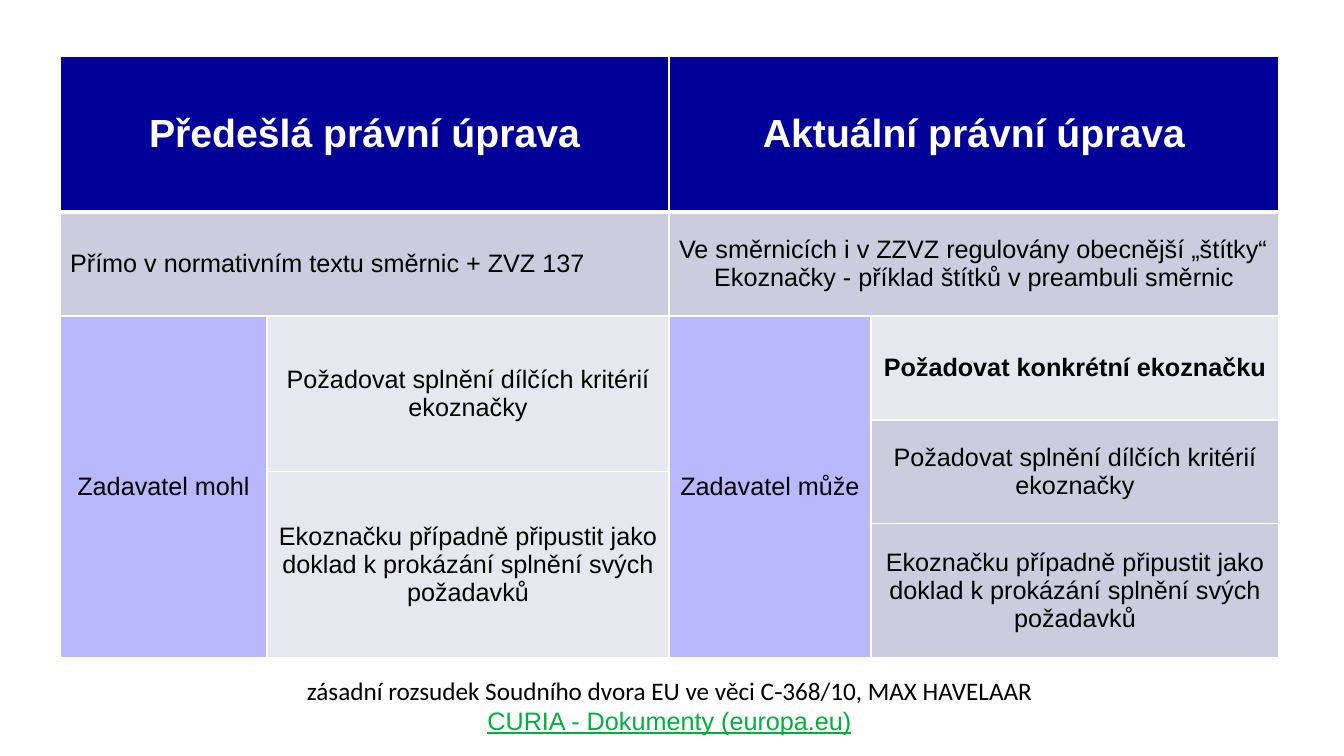
import pptx
import pptx.util
import pptx.dml.color
import pptx.enum.text
import lxml.etree

PX = 914400 / 100.8
COLORS = {
    "white": "FFFFFF",
    "black": "000000",
    "navy": "000099",
    "lilac": "B8B8FF",
    "gray": "CCCCDE",
    "pale": "E7E7EF",
    "link": "00AF3F",
}
CENTER = pptx.enum.text.PP_ALIGN.CENTER
JUSTIFY = pptx.enum.text.PP_ALIGN.JUSTIFY
CRITERIA = "Požadovat splnění dílčích kritérií ekoznačky"
EVIDENCE = "Ekoznačku případně připustit jako doklad k prokázání splnění svých požadavků"


def add_run(paragraph, text, size=18, font="Arial", color="black", bold=False, underline=False):
    run = paragraph.add_run()
    run.text = text
    run.font.size = pptx.util.Pt(size)
    run.font.name = font
    run.font.bold = bold
    run.font.underline = underline
    run.font.color.rgb = pptx.dml.color.RGBColor.from_string(COLORS[color])


def add_border(cell, side, points):
    """Draw a white line on one side (L, R, T or B) of a table cell."""
    namespace = pptx.oxml.ns.qn
    line = lxml.etree.SubElement(
        cell._tc.get_or_add_tcPr(), namespace("a:ln" + side), w=str(pptx.util.Pt(points))
    )
    fill = lxml.etree.SubElement(line, namespace("a:solidFill"))
    lxml.etree.SubElement(fill, namespace("a:srgbClr"), val=COLORS["white"])


presentation = pptx.Presentation()
presentation.slide_width = round(1344 * PX)
presentation.slide_height = round(756 * PX)
slide = presentation.slides.add_slide(presentation.slide_layouts[6])

# Comparison table
column_widths = [207, 402, 202, 408]
row_heights = [156, 104, 104, 52, 52, 134]
frame = slide.shapes.add_table(
    len(row_heights), len(column_widths),
    round(60 * PX), round(56 * PX),
    round(sum(column_widths) * PX), round(sum(row_heights) * PX),
)
table = frame.table
for column, width in zip(table.columns, column_widths):
    column.width = round(width * PX)
for row, height in zip(table.rows, row_heights):
    row.height = round(height * PX)

for row_index in range(len(row_heights)):
    for column_index in range(len(column_widths)):
        cell = table.cell(row_index, column_index)
        for side in "LRTB":
            under_header = (row_index, side) in [(0, "B"), (1, "T")]
            add_border(cell, side, 3 if under_header else 1)

header = {"size": 28, "color": "white", "bold": True}
# Row, column, rows spanned, columns spanned, fill, paragraphs, run format
cells = [
    (0, 0, 1, 2, "navy", [("Předešlá právní úprava", CENTER)], header),
    (0, 2, 1, 2, "navy", [("Aktuální právní úprava", CENTER)], header),
    (1, 0, 1, 2, "gray", [("Přímo v normativním textu směrnic + ZVZ 137", JUSTIFY)], {}),
    (1, 2, 1, 2, "gray", [
        ("Ve směrnicích i v ZZVZ regulovány obecnější „štítky“", JUSTIFY),
        ("Ekoznačky - příklad štítků v preambuli směrnic", CENTER),
    ], {}),
    (2, 0, 4, 1, "lilac", [("Zadavatel mohl", CENTER)], {}),
    (2, 1, 2, 1, "pale", [(CRITERIA, CENTER)], {}),
    (4, 1, 2, 1, "pale", [(EVIDENCE, CENTER)], {}),
    (2, 2, 4, 1, "lilac", [("Zadavatel může", CENTER)], {}),
    (2, 3, 1, 1, "pale", [("Požadovat konkrétní ekoznačku", CENTER)], {"bold": True}),
    (3, 3, 2, 1, "gray", [(CRITERIA, CENTER)], {}),
    (5, 3, 1, 1, "gray", [(EVIDENCE, CENTER)], {}),
]
for top, left, rows, columns, fill, paragraphs, run_format in cells:
    cell = table.cell(top, left)
    if rows * columns > 1:
        cell.merge(table.cell(top + rows - 1, left + columns - 1))
    cell.fill.solid()
    cell.fill.fore_color.rgb = pptx.dml.color.RGBColor.from_string(COLORS[fill])
    cell.vertical_anchor = pptx.enum.text.MSO_ANCHOR.MIDDLE
    for index, (text, alignment) in enumerate(paragraphs):
        text_frame = cell.text_frame
        paragraph = text_frame.add_paragraph() if index else text_frame.paragraphs[0]
        paragraph.alignment = alignment
        add_run(paragraph, text, **run_format)

# Case law reference
reference = slide.shapes.add_textbox(
    round(60 * PX), round(670 * PX), round(sum(column_widths) * PX), round(72 * PX)
)
reference.text_frame.word_wrap = True
reference.text_frame.auto_size = pptx.enum.text.MSO_AUTO_SIZE.SHAPE_TO_FIT_TEXT
judgment = reference.text_frame.paragraphs[0]
judgment.alignment = CENTER
add_run(judgment, "zásadní rozsudek Soudního dvora EU ve věci C", font="Calibri")
add_run(judgment, "‑", font="Cambria")
add_run(judgment, "368/10, MAX HAVELAAR", font="Calibri")
source = reference.text_frame.add_paragraph()
source.alignment = CENTER
add_run(source, "CURIA - Dokumenty (europa.eu)", color="link", underline=True)

presentation.save("out.pptx")
